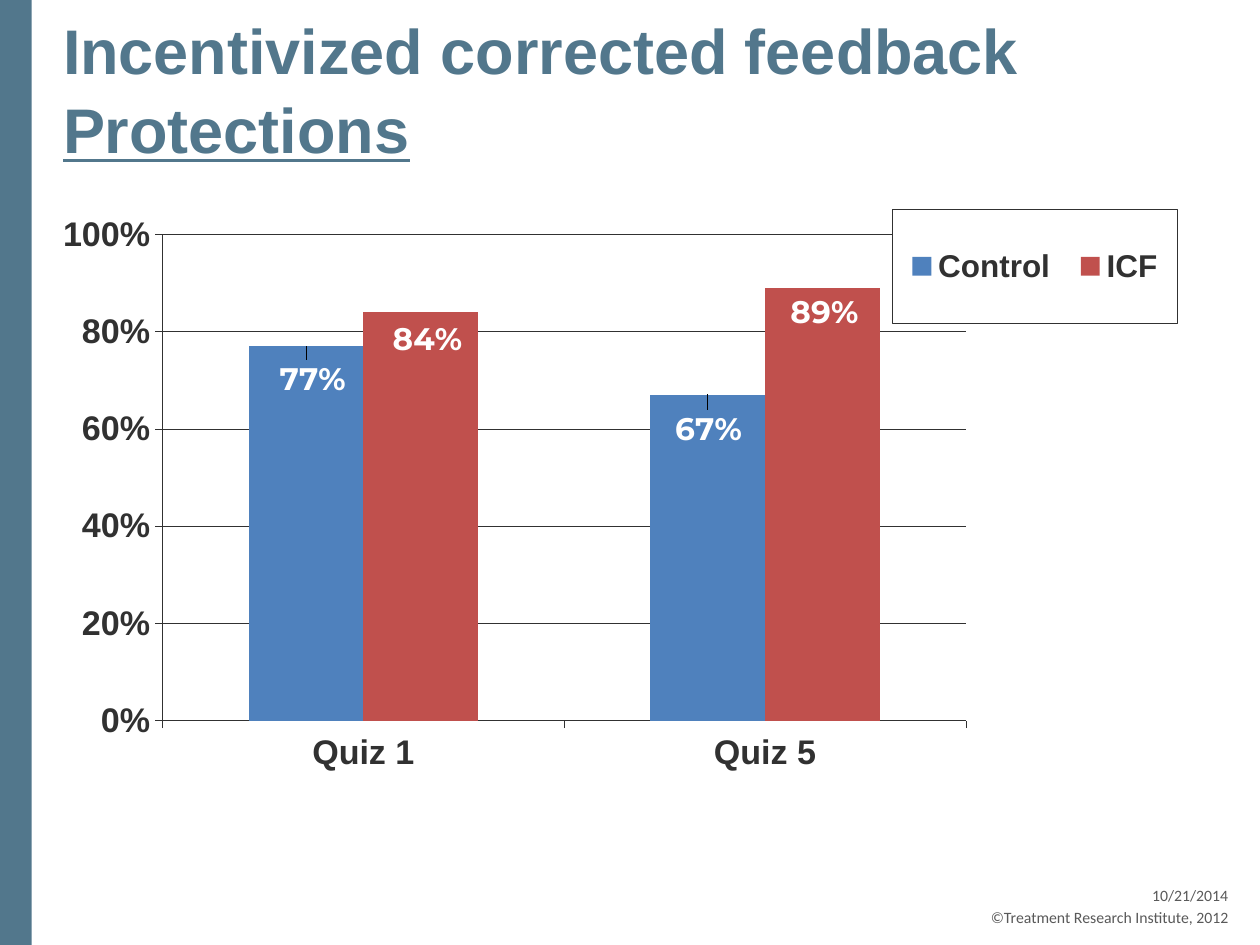
from lxml import etree
from pptx import Presentation
from pptx import util as u
from pptx.chart.data import CategoryChartData
from pptx.dml.color import RGBColor
from pptx.enum import chart as charts, shapes, text
from pptx.oxml import parse_xml
from pptx.oxml.ns import nsdecls

COLORS = {"slate": "52778C", "ink": "313131", "grey": "595959", "white": "FFFFFF",
          "control": "4F81BD", "icf": "C0504D"}
QUIZZES = ["Quiz 1", "Quiz 5"]
# name, colour, scores, label offsets as fractions of the chart
SERIES = [
    ("Control", "control", [0.77, 0.67], [(0.006, 0.014), (0.001, 0.016)]),
    ("ICF", "icf", [0.84, 0.89], [(0.006, 0.005), (0.002, 0)]),
]


def color(name):
    return RGBColor.from_string(COLORS[name])


def manual_layout(x, y, w=None, h=None, inner=False, edge=True):
    """Return a c:layout element; without edge, x and y are offsets."""
    layout = etree.fromstring(f"<c:layout {nsdecls('c')}><c:manualLayout/></c:layout>")
    values = [("layoutTarget", "inner" if inner else None),
              ("xMode", "edge" if edge else None), ("yMode", "edge" if edge else None),
              ("x", x), ("y", y), ("w", w), ("h", h)]
    for tag, value in values:
        if value is not None:
            etree.SubElement(layout[0], layout.tag.replace("layout", tag)).set("val", str(value))
    return layout


def white_area(line=None):
    """Return a c:spPr element with white fill and an optional thin line."""
    stroke = (f'<a:solidFill><a:srgbClr val="{COLORS[line]}"/></a:solidFill>'
              if line else "<a:noFill/>")
    return parse_xml(
        f'<c:spPr {nsdecls("c", "a")}><a:solidFill><a:srgbClr val="{COLORS["white"]}"/>'
        f'</a:solidFill><a:ln w="3175">{stroke}</a:ln></c:spPr>')


class SlideBuilder:
    def __init__(self, presentation):
        self.slide = presentation.slides.add_slide(presentation.slide_layouts[5])

    @staticmethod
    def style(font, size, name, ink, bold=False):
        font.size, font.name, font.bold = u.Pt(size), name, bold
        font.color.rgb = color(ink)

    @staticmethod
    def thin_line(line):
        line.color.rgb = color("ink")
        line.width = u.Pt(0.25)

    def band(self, left, top, width, height):
        shape = self.slide.shapes.add_shape(
            shapes.MSO_SHAPE.RECTANGLE, *map(u.Cm, (left, top, width, height)))
        shape.shadow.inherit = False
        shape.fill.solid()
        shape.fill.fore_color.rgb = color("slate")
        shape.line.fill.background()

    def title(self, first, underlined, box):
        shape = self.slide.shapes.title
        shape.left, shape.top, shape.width, shape.height = map(u.Cm, box)
        frame = shape.text_frame
        frame.auto_size = text.MSO_AUTO_SIZE.NONE
        frame.word_wrap = True
        frame.vertical_anchor = text.MSO_ANCHOR.BOTTOM
        frame.margin_left = 0
        frame.margin_bottom = u.Cm(0.23)
        paragraph = frame.paragraphs[0]
        paragraph.alignment = text.PP_ALIGN.LEFT
        paragraph.line_spacing = 1.05
        self.style(paragraph.font, 36, "Arial", "slate", True)
        paragraph.add_run().text = first
        paragraph.add_line_break()
        run = paragraph.add_run()
        run.text = underlined
        run.font.underline = True

    def footer(self, wording, top):
        box = self.slide.shapes.add_textbox(*map(u.Cm, (16.71, top, 8.05, 0.56)))
        frame = box.text_frame
        frame.word_wrap = True
        frame.margin_left = frame.margin_right = frame.margin_top = frame.margin_bottom = 0
        paragraph = frame.paragraphs[0]
        paragraph.text = wording
        paragraph.alignment = text.PP_ALIGN.RIGHT
        self.style(paragraph.font, 9, "Calibri", "grey")

    def column_chart(self, box):
        data = CategoryChartData(number_format="0%")
        data.categories = QUIZZES
        for name, _, scores, _ in SERIES:
            data.add_series(name, scores)
        chart = self.slide.shapes.add_chart(
            charts.XL_CHART_TYPE.COLUMN_CLUSTERED, *map(u.Cm, box), data).chart
        chart.has_title = False
        self.style(chart.font, 17.8, "Montserrat", "ink", True)
        plot = chart.plots[0]
        plot.vary_by_categories = False
        plot.gap_width, plot.overlap = 150, 0
        for series, (_, fill, _, offsets) in zip(plot.series, SERIES):
            self.series(series, fill, offsets)
        self.axes(chart)
        self.legend(chart)
        area = chart._chartSpace
        area.find("{*}txPr").addprevious(white_area())
        plot_area = area.find("{*}chart/{*}plotArea")
        for old in plot_area.findall("{*}layout"):
            plot_area.remove(old)
        plot_area.insert(0, manual_layout(0.087, 0.057, 0.709, 0.78, inner=True))
        plot_area.append(white_area())

    def series(self, series, fill, offsets):
        series.format.fill.solid()
        series.format.fill.fore_color.rgb = color(fill)
        labels = series.data_labels
        labels.show_value = True
        labels.number_format, labels.number_format_is_linked = "0%", False
        self.style(labels.font, 17.8, "Montserrat", "white", True)
        labels.position = charts.XL_LABEL_POSITION.INSIDE_END
        for index in range(len(offsets)):
            label = series.points[index].data_label
            self.style(label.font, 17.8, "Montserrat", "white", True)
            label.position = charts.XL_LABEL_POSITION.INSIDE_END
        for element, offset in zip(series._element.findall("{*}dLbls/{*}dLbl"), offsets):
            element.insert(1, manual_layout(*offset, edge=False))

    def axes(self, chart):
        for axis in (chart.category_axis, chart.value_axis):
            self.style(axis.tick_labels.font, 19.5, "Arial", "ink", True)
            self.thin_line(axis.format.line)
            axis.major_tick_mark = charts.XL_TICK_MARK.OUTSIDE
            axis.minor_tick_mark = charts.XL_TICK_MARK.NONE
        chart.category_axis.tick_label_position = charts.XL_TICK_LABEL_POSITION.LOW
        values = chart.value_axis
        values.minimum_scale, values.maximum_scale, values.major_unit = 0, 1, 0.2
        values.tick_labels.number_format = "0%"
        values.tick_labels.number_format_is_linked = False
        values.has_major_gridlines = True
        self.thin_line(values.major_gridlines.format.line)

    def legend(self, chart):
        chart.has_legend = True
        legend = chart.legend
        legend.position = charts.XL_LEGEND_POSITION.CORNER
        legend.include_in_layout = False
        self.style(legend.font, 18, "Arial", "ink", True)
        element = legend._element
        for old in element.findall("{*}layout"):
            element.remove(old)
        element.find("{*}overlay").addprevious(manual_layout(0.731, 0.016, 0.252, 0.184))
        element.find("{*}txPr").addprevious(white_area("ink"))


def main():
    presentation = Presentation()
    presentation.slide_width, presentation.slide_height = u.Cm(25.4), u.Cm(19.05)
    builder = SlideBuilder(presentation)
    builder.footer("©Treatment Research Institute, 2012", 18.29)
    builder.footer("10/21/2014", 17.86)
    builder.band(0, 0, 0.64, 19.05)
    builder.title("Incentivized corrected feedback", "Protections", (1.27, 1.47, 22.86, 2.11))
    builder.column_chart((1.27, 4.01, 22.86, 12.57))
    presentation.save("out.pptx")


if __name__ == "__main__":
    main()
